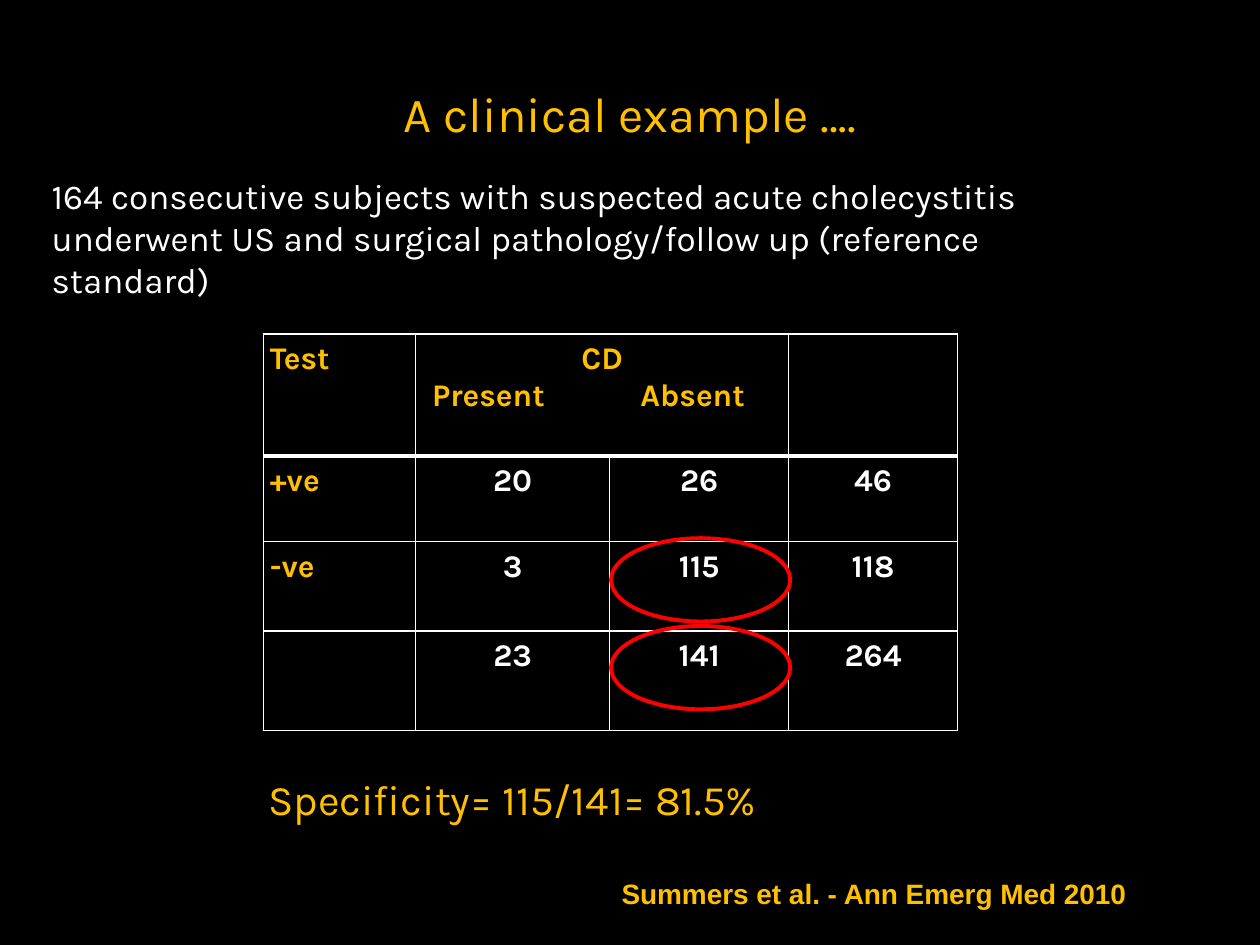
import pptx
import pptx.util
import pptx.dml.color
import pptx.enum.shapes
import pptx.enum.text
import pptx.oxml
import pptx.oxml.ns

Cm = pptx.util.Cm
Pt = pptx.util.Pt
Align = pptx.enum.text.PP_ALIGN
Anchor = pptx.enum.text.MSO_ANCHOR
GOLD, WHITE, BLACK, RED = "FFC000", "FFFFFF", "000000", "FF0000"
INSET = Cm(0.13)
COLUMN_WIDTHS = [3.07, 3.91, 3.61, 3.4]
ROW_HEIGHTS = [2.46, 1.73, 1.8, 2.01]
COUNTS = [
    ["+ve", "20", "26", "46"],
    ["-ve", "3", "115", "118"],
    ["", "23", "141", "264"],
]


def paint(color_format, hex_color):
    """Apply a hex colour to a colour format."""
    color_format.rgb = pptx.dml.color.RGBColor.from_string(hex_color)


def write(paragraph, text, size=18, font="Karla", color=GOLD, bold=False,
          align=None, before=None, spacing=None):
    """Write one formatted run into a paragraph."""
    run = paragraph.add_run()
    run.text = text
    run.font.name, run.font.size, run.font.bold = font, Pt(size), bold
    paint(run.font.color, color)
    if align is not None:
        paragraph.alignment = align
    if before is not None:
        paragraph.space_before = Pt(before)
    if spacing is not None:
        paragraph.line_spacing = spacing


def place(holder, left, top, width, height, anchor=Anchor.TOP, wrap=True):
    """Position a text holder and return its first paragraph."""
    holder.left, holder.top = Cm(left), Cm(top)
    holder.width, holder.height = Cm(width), Cm(height)
    frame = holder.text_frame
    frame.margin_left = frame.margin_right = INSET
    frame.margin_top = frame.margin_bottom = INSET
    frame.auto_size = pptx.enum.text.MSO_AUTO_SIZE.NONE
    frame.vertical_anchor, frame.word_wrap = anchor, wrap
    return frame.paragraphs[0]


def add_note(slide, text, box, wrap=True, **style):
    """Add a free text line."""
    note = slide.shapes.add_textbox(0, 0, 0, 0)
    write(place(note, *box, wrap=wrap), text, spacing=0.97, **style)


def remove_bullet(paragraph):
    """Turn a list paragraph into plain flush text."""
    properties = paragraph._p.get_or_add_pPr()
    properties.set("marL", "0")
    properties.set("indent", "0")
    properties.append(pptx.oxml.parse_xml(
        f'<a:buNone {pptx.oxml.ns.nsdecls("a")}/>'))


def set_tab(paragraph, margin, position):
    """Give a paragraph a left margin and one tab stop."""
    properties = paragraph._p.get_or_add_pPr()
    properties.set("marL", str(margin))
    properties.append(pptx.oxml.parse_xml(
        f'<a:tabLst {pptx.oxml.ns.nsdecls("a")}>'
        f'<a:tab pos="{position}" algn="l"/></a:tabLst>'))


def format_cell(cell, top=1, bottom=1):
    """Clear a cell's fill and set its margins and white borders."""
    cell.fill.background()
    cell.margin_left = cell.margin_right = INSET
    cell.margin_top = cell.margin_bottom = INSET
    borders = {"lnL": 1, "lnR": 1, "lnT": top, "lnB": bottom}
    for index, (side, width) in enumerate(borders.items()):
        cell._tc.get_or_add_tcPr().insert(index, pptx.oxml.parse_xml(
            f'<a:{side} {pptx.oxml.ns.nsdecls("a")} w="{Pt(width)}">'
            f'<a:solidFill><a:srgbClr val="{WHITE}"/></a:solidFill></a:{side}>'))


def add_results_table(slide):
    """Add the two-by-two diagnostic table with its totals."""
    table = slide.shapes.add_table(
        len(ROW_HEIGHTS), len(COLUMN_WIDTHS), Cm(5.31), Cm(6.73),
        Cm(sum(COLUMN_WIDTHS)), Cm(sum(ROW_HEIGHTS))).table
    table.first_row = table.horz_banding = False
    for column, width in zip(table.columns, COLUMN_WIDTHS):
        column.width = Cm(width)
    for row_index, height in enumerate(ROW_HEIGHTS):
        table.rows[row_index].height = Cm(height)
        for cell in table.rows[row_index].cells:
            format_cell(cell, top=3 if row_index == 1 else 1,
                        bottom=3 if row_index == 0 else 1)

    table.cell(0, 1).merge(table.cell(0, 2))
    write(table.cell(0, 0).text_frame.paragraphs[0], "Test", bold=True)
    disease = table.cell(0, 1).text_frame
    write(disease.paragraphs[0], "CD", bold=True, align=Align.CENTER)
    states = disease.add_paragraph()
    set_tab(states, Cm(0.2), Cm(4.2))
    write(states, "Present\tAbsent", bold=True, align=Align.LEFT)

    for row_index, counts in enumerate(COUNTS, start=1):
        for column_index, count in enumerate(counts):
            if count:
                is_label = column_index == 0
                write(table.cell(row_index, column_index).text_frame.paragraphs[0],
                      count, bold=True, color=GOLD if is_label else WHITE,
                      align=Align.LEFT if is_label else Align.CENTER)


def add_ring(slide, top):
    """Circle one count in the Absent column."""
    ring = slide.shapes.add_shape(
        pptx.enum.shapes.MSO_SHAPE.OVAL, Cm(12.32), Cm(top), Cm(3.61), Cm(1.68))
    ring.shadow.inherit = False
    ring.fill.background()
    ring.line.width = Pt(2.25)
    paint(ring.line.color, RED)


def main():
    """Build and save the slide."""
    deck = pptx.Presentation()
    deck.slide_width, deck.slide_height = Cm(25.4), Cm(19.05)
    slide = deck.slides.add_slide(deck.slide_layouts[1])
    slide.background.fill.solid()
    paint(slide.background.fill.fore_color, BLACK)

    heading = place(slide.shapes.title, 1.9, 0.33, 21.6, 3.89, Anchor.MIDDLE)
    write(heading, "A clinical example ….", size=28, align=Align.CENTER)
    study = place(slide.placeholders[1], 0.91, 3.38, 21.95, 12.34)
    write(study, "164 consecutive subjects with suspected acute cholecystitis "
          "underwent US and surgical pathology/follow up (reference standard)",
          size=20, color=WHITE, before=4)
    remove_bullet(study)

    add_results_table(slide)
    add_note(slide, "Specificity= 115/141= 81.5%", (5.28, 15.52, 11.61, 1.27),
             wrap=False, size=24)
    add_note(slide, "Summers et al. - Ann Emerg Med 2010",
             (12.4, 17.58, 12.19, 0.86), size=16, font="Arial", bold=True)
    for top in (12.62, 10.85):
        add_ring(slide, top)
    deck.save("out.pptx")


if __name__ == "__main__":
    main()
